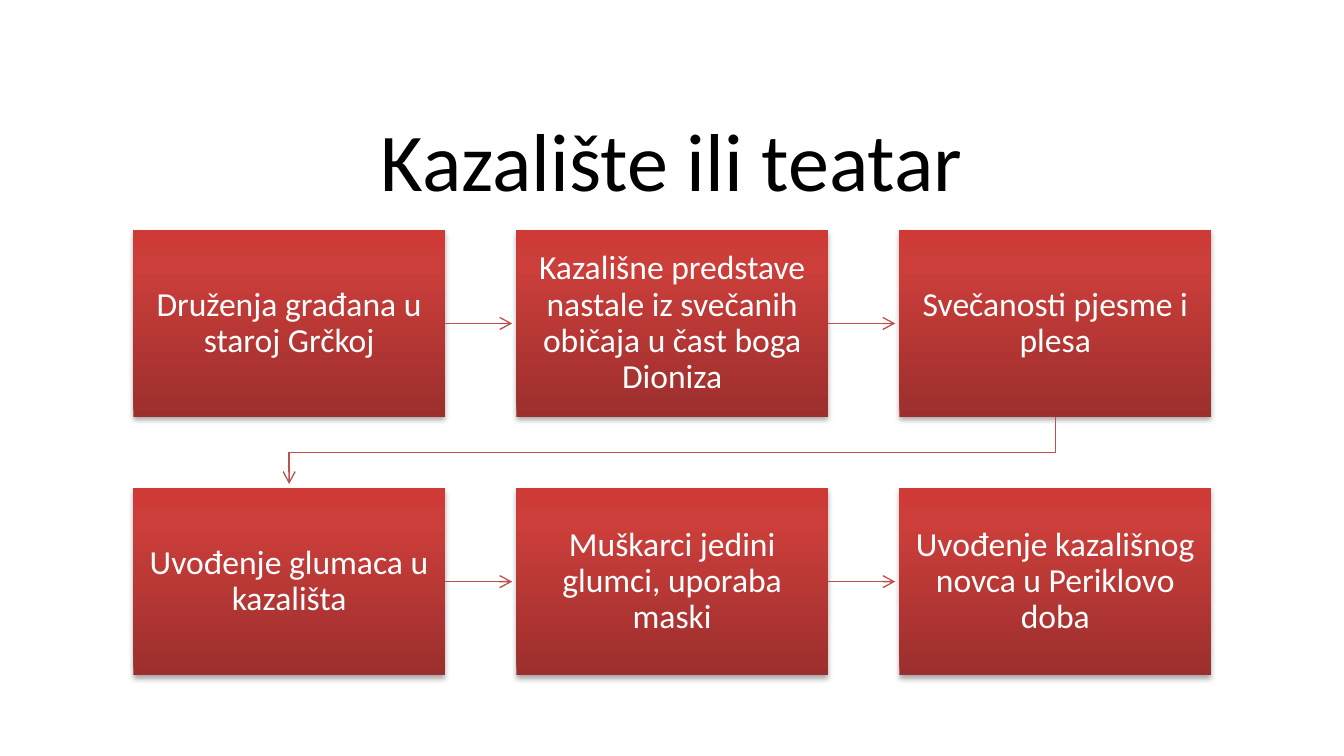
from copy import deepcopy
from dataclasses import dataclass

from lxml import etree
from pptx import Presentation
from pptx.dml.color import RGBColor
from pptx.enum.shapes import MSO_CONNECTOR, MSO_SHAPE
from pptx.enum.text import MSO_ANCHOR, MSO_AUTO_SIZE, PP_ALIGN
from pptx.oxml.ns import qn
from pptx.util import Cm, Pt

RECTANGLE = MSO_SHAPE.RECTANGLE
STRAIGHT = MSO_CONNECTOR.STRAIGHT
MIDDLE = MSO_ANCHOR.MIDDLE
NO_AUTOFIT = MSO_AUTO_SIZE.NONE
CENTER = PP_ALIGN.CENTER


@dataclass(frozen=True)
class Theme:
    font: str = "Calibri"
    title_size: int = 44
    step_size: int = 18
    title_color: str = "000000"
    step_color: str = "FFFFFF"
    arrow_color: str = "C0504D"
    gradient: tuple = ((0, "9C2F2D"), (0.8, "CB3E3A"), (1, "CE3B37"))


THEME = Theme()

TITLE = "Kazalište ili teatar"
STEPS = [
    "Druženja građana u staroj Grčkoj",
    "Kazališne predstave nastale iz svečanih običaja u čast boga Dioniza",
    "Svečanosti pjesme i plesa",
    "Uvođenje glumaca u kazališta",
    "Muškarci jedini glumci, uporaba maski",
    "Uvođenje kazališnog novca u Periklovo doba",
]

COLUMNS = 3
GRID_LEFT, GRID_TOP = Cm(2.52), Cm(4.35)
STEP_WIDTH, STEP_HEIGHT = Cm(5.89), Cm(3.53)
PITCH_X, PITCH_Y = Cm(7.24), Cm(4.88)
ARROW_CLEARANCE = Cm(0.08)


def write_text(shape, text, size, color, margins):
    frame = shape.text_frame
    frame.text = text
    frame_format = {
        "word_wrap": True,
        "auto_size": NO_AUTOFIT,
        "vertical_anchor": MIDDLE,
        **margins,
    }
    for name, value in frame_format.items():
        setattr(frame, name, value)
    paragraph = frame.paragraphs[0]
    paragraph.alignment = CENTER
    paragraph.line_spacing = 0.9
    font_format = {"name": THEME.font, "size": Pt(size)}
    for name, value in font_format.items():
        setattr(paragraph.font, name, value)
    paragraph.font.color.rgb = RGBColor.from_string(color)


def set_title(slide):
    title = slide.shapes.title
    place = {"left": Cm(1.27), "top": Cm(2.13), "width": Cm(22.86), "height": Cm(1.98)}
    for name, value in place.items():
        setattr(title, name, value)
    write_text(title, TITLE, THEME.title_size, THEME.title_color, {})


def fill_gradient(shape):
    """Fill from bottom to top with the theme's three stops."""
    shape.fill.gradient()
    shape.fill.gradient_angle = 90
    last_stop = shape.element.spPr.findall(".//" + qn("a:gs"))[-1]
    last_stop.addnext(deepcopy(last_stop))
    for stop, (position, color) in zip(shape.fill.gradient_stops, THEME.gradient):
        stop.position = position
        stop.color.rgb = RGBColor.from_string(color)


def add_soft_shadow(shape):
    shape.shadow.inherit = False
    effects = shape.element.spPr.find(qn("a:effectLst"))
    shadow = etree.SubElement(
        effects, qn("a:outerShdw"),
        blurRad="40000", dist="23000", dir="5400000", rotWithShape="0",
    )
    color = etree.SubElement(shadow, qn("a:srgbClr"), val="000000")
    etree.SubElement(color, qn("a:alpha"), val="35000")


def add_step(slide, index, text):
    row, column = divmod(index, COLUMNS)
    step = slide.shapes.add_shape(
        RECTANGLE,
        GRID_LEFT + column * PITCH_X,
        GRID_TOP + row * PITCH_Y,
        STEP_WIDTH,
        STEP_HEIGHT,
    )
    fill_gradient(step)
    step.line.fill.background()
    add_soft_shadow(step)
    margins = {
        "margin_left": Cm(0.28),
        "margin_right": Cm(0.28),
        "margin_top": Cm(0.3),
        "margin_bottom": Cm(0.3),
    }
    write_text(step, text, THEME.step_size, THEME.step_color, margins)
    return step


def style_arrow(arrow):
    arrow.line.color.rgb = RGBColor.from_string(THEME.arrow_color)
    arrow.line.width = Pt(0.75)
    properties = arrow.element.spPr
    etree.SubElement(properties.find(qn("a:ln")), qn("a:tailEnd"), type="arrow")
    etree.SubElement(properties, qn("a:effectLst"))


def add_straight_arrow(slide, source, target):
    y = source.top + source.height // 2
    arrow = slide.shapes.add_connector(
        STRAIGHT, source.left + source.width, y, target.left - ARROW_CLEARANCE, y
    )
    style_arrow(arrow)


def add_row_break_arrow(slide, source, target):
    """Lead from the end of one row to the start of the next."""
    start_x = source.left + source.width // 2
    end_x = target.left + target.width // 2
    start_y = source.top + source.height
    middle_y = (start_y + target.top) // 2
    builder = slide.shapes.build_freeform(start_x, start_y)
    builder.add_line_segments(
        [(start_x, middle_y), (end_x, middle_y), (end_x, target.top - ARROW_CLEARANCE)],
        close=False,
    )
    arrow = builder.convert_to_shape()
    arrow.fill.background()
    style_arrow(arrow)


def main():
    presentation = Presentation()
    presentation.slide_width = Cm(25.4)
    presentation.slide_height = Cm(14.29)
    slide = presentation.slides.add_slide(presentation.slide_layouts[5])
    set_title(slide)
    steps = [add_step(slide, index, text) for index, text in enumerate(STEPS)]
    for source, target in zip(steps, steps[1:]):
        same_row = source.top == target.top
        add_arrow = add_straight_arrow if same_row else add_row_break_arrow
        add_arrow(slide, source, target)
    presentation.save("out.pptx")


if __name__ == "__main__":
    main()
